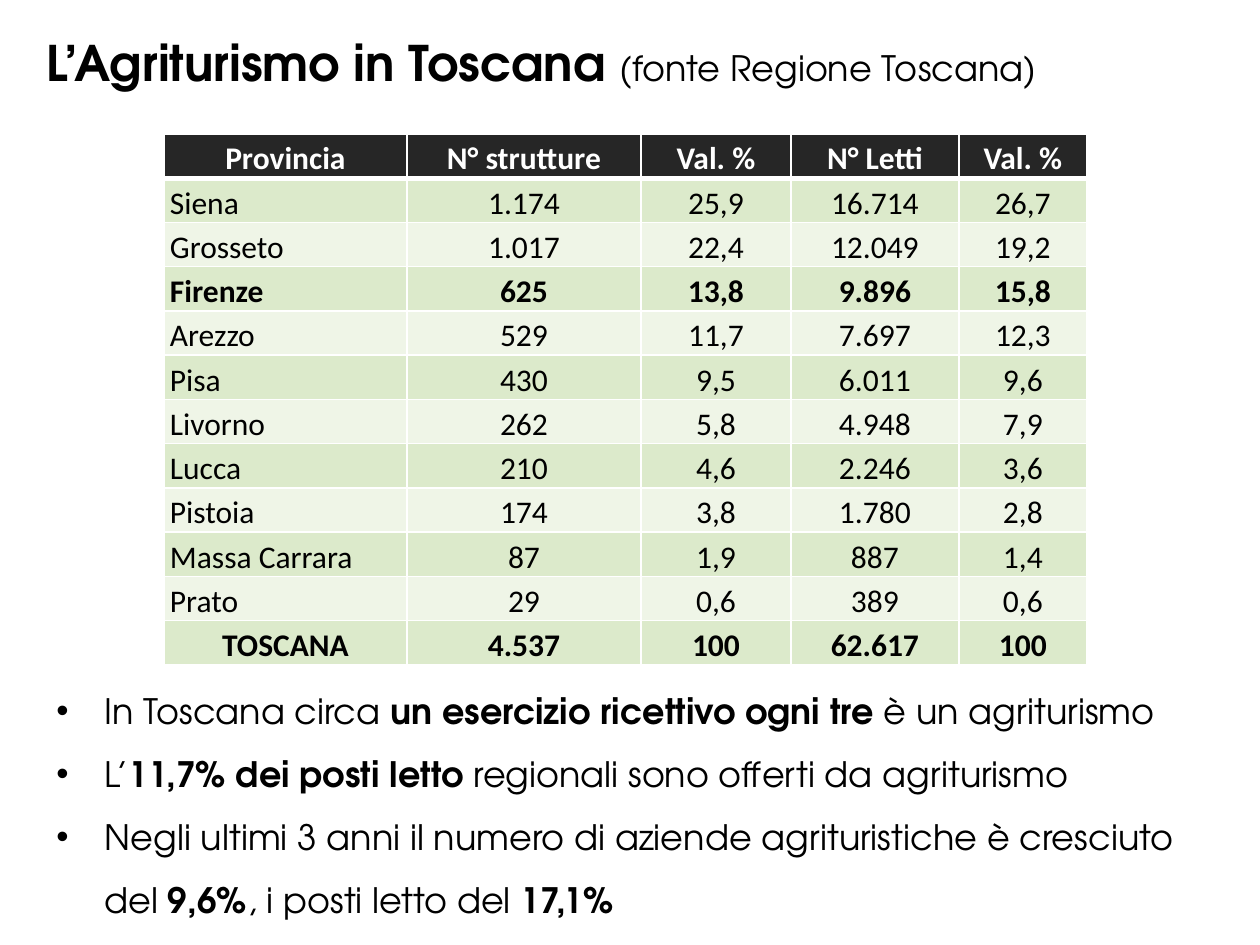
from lxml import etree
from pptx import Presentation
from pptx import util as u
from pptx.dml.color import RGBColor
from pptx.enum import text
from pptx.oxml import ns

EMU_PER_PX = 914400 / 126
COLORS = {"text": "000000", "white": "FFFFFF", "header": "262626",
          "band_dark": "DCEACB", "band_light": "EFF5E7"}
BODY_FONT = "TeX Gyre Adventor"
TABLE_FONT = "Calibri"

COLUMN_WIDTHS = [243, 234, 150, 168, 128]
ROWS = [
    ["Provincia", "N° strutture", "Val. %", "N° Letti", "Val. %"],
    ["Siena", "1.174", "25,9", "16.714", "26,7"],
    ["Grosseto", "1.017", "22,4", "12.049", "19,2"],
    ["Firenze", "625", "13,8", "9.896", "15,8"],
    ["Arezzo", "529", "11,7", "7.697", "12,3"],
    ["Pisa", "430", "9,5", "6.011", "9,6"],
    ["Livorno", "262", "5,8", "4.948", "7,9"],
    ["Lucca", "210", "4,6", "2.246", "3,6"],
    ["Pistoia", "174", "3,8", "1.780", "2,8"],
    ["Massa Carrara", "87", "1,9", "887", "1,4"],
    ["Prato", "29", "0,6", "389", "0,6"],
    ["TOSCANA", "4.537", "100", "62.617", "100"],
]
BOLD_ROWS = {"Provincia", "Firenze", "TOSCANA"}
CENTERED_LABELS = {"Provincia", "TOSCANA"}

BULLETS = [
    [("In Toscana circa ", False), ("un esercizio ricettivo ogni tre ", True),
     ("è un agriturismo", False)],
    [("L’", False), ("11,7% dei posti letto", True),
     (" regionali sono offerti da agriturismo", False)],
    [("Negli ultimi 3 anni il numero di aziende agrituristiche è cresciuto del ", False),
     ("9,6%", True), (", i posti letto del ", False), ("17,1%", True)],
]


def px(n):
    return u.Emu(round(n * EMU_PER_PX))


def rgb(name):
    return RGBColor.from_string(COLORS[name])


def add_run(p, content, font=BODY_FONT, size=20, bold=False, color="text"):
    r = p.add_run()
    r.text = content
    r.font.name = font
    r.font.size = u.Pt(size)
    r.font.bold = bold
    r.font.color.rgb = rgb(color)


def add_text_frame(slide, left, top, width, height):
    tf = slide.shapes.add_textbox(px(left), px(top), px(width), px(height)).text_frame
    tf.word_wrap = True
    return tf


def set_bullet(p, indent):
    """Hang the paragraph behind a round bullet."""
    pPr = p._p.get_or_add_pPr()
    pPr.set("marL", str(px(indent)))
    pPr.set("indent", str(-px(indent)))
    etree.SubElement(pPr, ns.qn("a:buFont"), typeface="Arial")
    etree.SubElement(pPr, ns.qn("a:buChar"), char="•")


def set_borders(cell, **widths):
    """Draw white cell borders; widths are points by side, L, R, T and B."""
    tcPr = cell._tc.get_or_add_tcPr()
    for side in "LRTB":
        ln = etree.SubElement(tcPr, ns.qn(f"a:ln{side}"), w=str(u.Pt(widths.get(side, 1))))
        fill = etree.SubElement(ln, ns.qn("a:solidFill"))
        etree.SubElement(fill, ns.qn("a:srgbClr"), val=COLORS["white"])


def fill_cell(cell, content, fill, centered, **font):
    cell.fill.solid()
    cell.fill.fore_color.rgb = rgb(fill)
    cell.vertical_anchor = text.MSO_ANCHOR.MIDDLE
    cell.margin_left = cell.margin_right = px(6)
    cell.margin_top = cell.margin_bottom = 0
    p = cell.text_frame.paragraphs[0]
    p.alignment = text.PP_ALIGN.CENTER if centered else text.PP_ALIGN.LEFT
    p.line_spacing = 1.15
    add_run(p, content, font=TABLE_FONT, size=18, **font)


def add_province_table(slide):
    table = slide.shapes.add_table(len(ROWS), len(COLUMN_WIDTHS), px(164), px(134),
                                   px(sum(COLUMN_WIDTHS)), px(522)).table
    table.horz_banding = False
    for column, width in zip(table.columns, COLUMN_WIDTHS):
        column.width = px(width)
    for i, row in enumerate(ROWS):
        fill = "header" if i == 0 else "band_dark" if i % 2 else "band_light"
        for j, content in enumerate(row):
            cell = table.cell(i, j)
            set_borders(cell, T=3 if i == 1 else 1, B=3 if i == 0 else 1)
            fill_cell(cell, content, fill, j > 0 or content in CENTERED_LABELS,
                      bold=row[0] in BOLD_ROWS, color="text" if i else "white")


def add_bullets(slide):
    tf = add_text_frame(slide, 44, 662, 1160, 267)
    for i, runs in enumerate(BULLETS):
        p = tf.add_paragraph() if i else tf.paragraphs[0]
        p.line_spacing = 1.5
        set_bullet(p, 48)
        for content, bold in runs:
            add_run(p, content, bold=bold)


def add_title(slide):
    p = add_text_frame(slide, 34, 26, 1152, 72).paragraphs[0]
    add_run(p, "L’Agriturismo in Toscana ", size=28, bold=True)
    add_run(p, "(fonte Regione Toscana)")


def main():
    prs = Presentation()
    prs.slide_width, prs.slide_height = px(1260), px(945)
    slide = prs.slides.add_slide(prs.slide_layouts[6])
    add_province_table(slide)
    add_bullets(slide)
    add_title(slide)
    prs.save("out.pptx")


if __name__ == "__main__":
    main()
